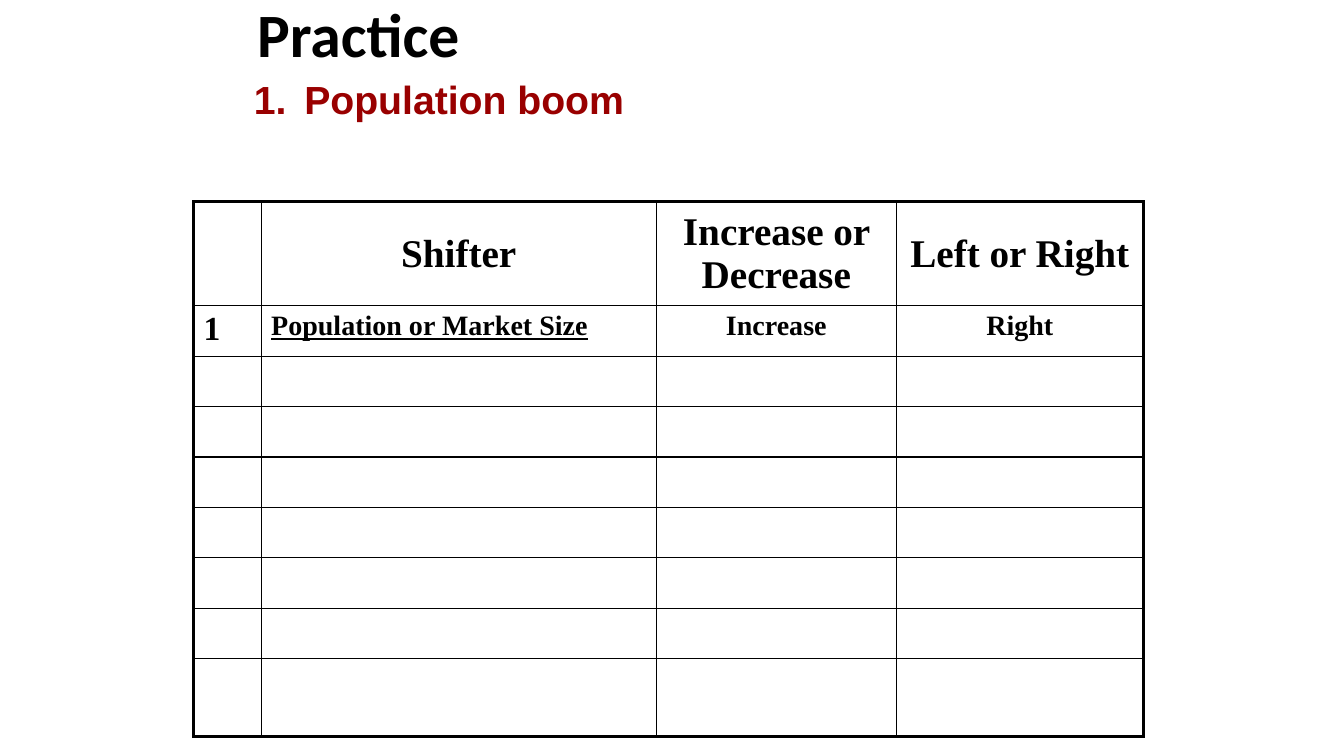
import pptx
import pptx.dml.color
import pptx.enum.text
import pptx.oxml
import pptx.oxml.ns
import pptx.util

PX = 9144  # EMU per px, 100 px to the inch
BLACK, RED = "000000", "990000"
SERIF = "Times New Roman"
THIN, THICK = 1, 2.25
LEFT, CENTER = pptx.enum.text.PP_ALIGN.LEFT, pptx.enum.text.PP_ALIGN.CENTER
TOP, MIDDLE = pptx.enum.text.MSO_ANCHOR.TOP, pptx.enum.text.MSO_ANCHOR.MIDDLE

COLUMNS = [67, 392, 238, 245]
ROWS = [103] + [50] * 7 + [77]
HEADERS = ["", "Shifter", "Increase or Decrease", "Left or Right"]
ANSWER = ["1", "Population or Market Size", "Increase", "Right"]


def rgb(color):
    return pptx.dml.color.RGBColor.from_string(color)


def add_xml(parent, tag, content="", **attrs):
    attr_text = "".join(f' {name}="{value}"' for name, value in attrs.items())
    ns = pptx.oxml.ns.nsdecls("a")
    parent.append(pptx.oxml.parse_xml(f"<a:{tag} {ns}{attr_text}>{content}</a:{tag}>"))


def place(sp, left, top, width, height):
    sp.left, sp.top, sp.width, sp.height = (v * PX for v in (left, top, width, height))


def set_text(p, text, font, size, color=BLACK, align=LEFT, underline=False):
    p.text = text
    p.alignment = align
    for r in p.runs:
        r.font.name = font
        r.font.size = pptx.util.Pt(size)
        r.font.bold = True
        r.font.underline = underline
        r.font.color.rgb = rgb(color)


def add_title(slide, text):
    sp = slide.shapes.title
    place(sp, 250, -25, 850, 125)
    tf = sp.text_frame
    tf.word_wrap = True
    tf.auto_size = pptx.enum.text.MSO_AUTO_SIZE.NONE
    tf.vertical_anchor = MIDDLE
    tf.margin_left = tf.margin_right = tf.margin_top = tf.margin_bottom = 5 * PX
    p = tf.paragraphs[0]
    set_text(p, text, "Calibri", 44)
    p.line_spacing = 0.9


def add_numbered_text(slide, text):
    sp = slide.shapes.add_textbox(192 * PX, 75 * PX, 975 * PX, 52 * PX)
    tf = sp.text_frame
    tf.word_wrap = True
    p = tf.paragraphs[0]
    p.level = 1
    p.line_spacing = 0.9
    pPr = p._p.get_or_add_pPr()
    pPr.set("marL", str(100 * PX))
    pPr.set("indent", str(-50 * PX))
    add_xml(pPr, "buFont", typeface="+mj-lt")
    add_xml(pPr, "buAutoNum", type="arabicPeriod")
    set_text(p, text, "Arial", 28, RED)


def set_borders(cell, row, col):
    """Thick lines on the outside of the table, thin lines inside."""
    tcPr = cell._tc.get_or_add_tcPr()
    outer = {"lnL": col == 0, "lnR": col == len(COLUMNS) - 1,
             "lnT": row == 0, "lnB": row == len(ROWS) - 1}
    line_fill = f'<a:solidFill><a:srgbClr val="{BLACK}"/></a:solidFill>'
    for tag, is_outer in outer.items():
        width = pptx.util.Pt(THICK if is_outer else THIN)
        add_xml(tcPr, tag, line_fill, w=int(width))


def add_shifter_table(slide):
    frame = slide.shapes.add_table(len(ROWS), len(COLUMNS), 192 * PX, 200 * PX,
                                   sum(COLUMNS) * PX, sum(ROWS) * PX)
    table = frame.table
    table.first_row = table.horz_banding = False
    for column, width in zip(table.columns, COLUMNS):
        column.width = width * PX
    for row, height in zip(table.rows, ROWS):
        row.height = height * PX

    # Grid
    for row in range(len(ROWS)):
        for col in range(len(COLUMNS)):
            cell = table.cell(row, col)
            set_borders(cell, row, col)
            cell.fill.background()
            cell.vertical_anchor = TOP if row else MIDDLE

    # Header and first answer
    for col, (header, answer) in enumerate(zip(HEADERS, ANSWER)):
        if header:
            set_text(table.cell(0, col).text_frame.paragraphs[0], header, SERIF, 28,
                     align=CENTER)
        set_text(table.cell(1, col).text_frame.paragraphs[0], answer, SERIF,
                 20 if col else 24, align=CENTER if col > 1 else LEFT,
                 underline=col == 1)


def main():
    prs = pptx.Presentation()
    prs.slide_width, prs.slide_height = 1333 * PX, 750 * PX
    slide = prs.slides.add_slide(prs.slide_layouts[5])
    add_title(slide, "Practice")
    add_numbered_text(slide, "Population boom")
    add_shifter_table(slide)
    prs.save("out.pptx")


if __name__ == "__main__":
    main()
